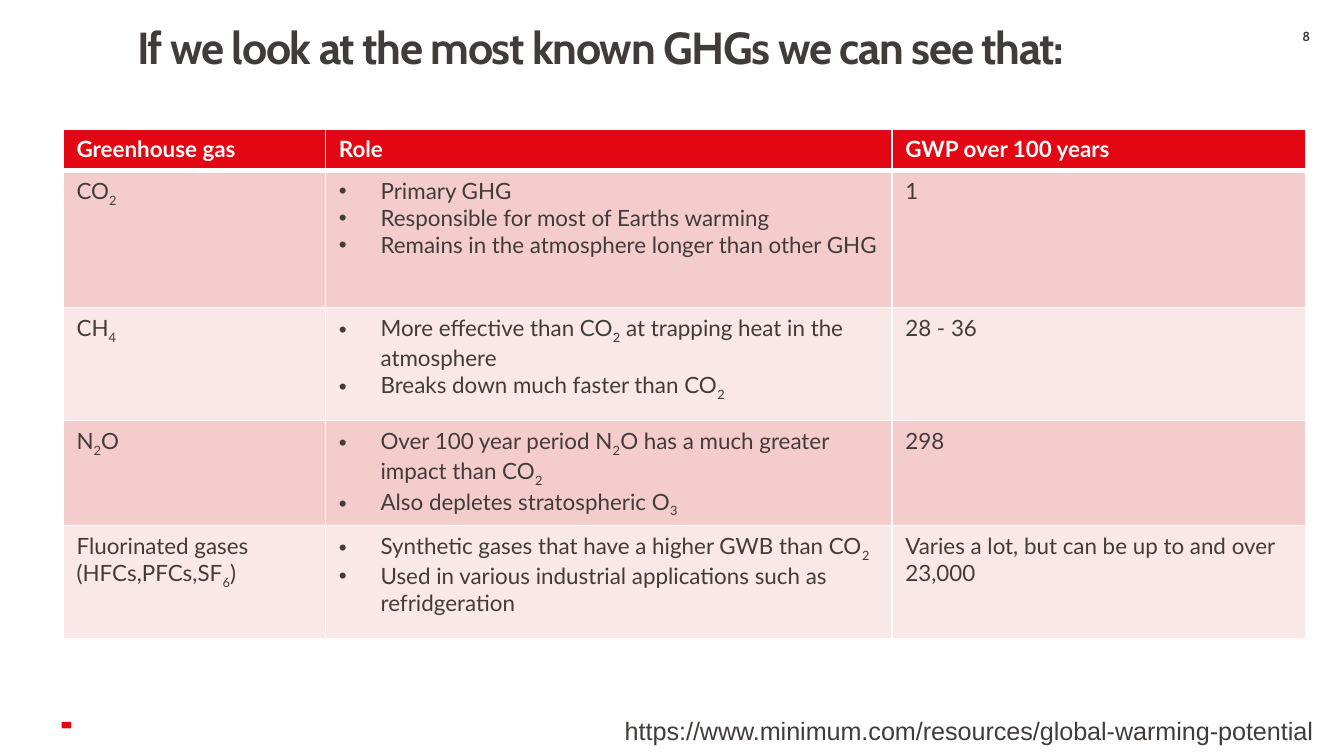
from lxml.etree import SubElement
from pptx import Presentation
from pptx.dml.color import RGBColor
from pptx.enum.shapes import MSO_SHAPE
from pptx.enum.text import MSO_ANCHOR, MSO_AUTO_SIZE, PP_ALIGN
from pptx.oxml.ns import qn
from pptx.util import Inches, Pt

RED = RGBColor(0xE3, 0x06, 0x13)
DARK = RGBColor(0x41, 0x3C, 0x3A)
WHITE = RGBColor(0xFF, 0xFF, 0xFF)
BANDS = [RGBColor(0xF4, 0xCC, 0xCC), RGBColor(0xFA, 0xE7, 0xE7)]

TITLE_FONT = {"name": "Cabin", "size": Pt(24), "bold": True}
NUMBER_FONT = {"name": "Cabin", "size": Pt(7), "bold": True}
LINK_FONT = {"name": "Arial", "size": Pt(13.5)}
HEADER_FONT = {"name": "Lato", "size": Pt(12), "bold": True}
BODY_FONT = {"name": "Lato", "size": Pt(12), "bold": False}

COLUMN_WIDTHS = [1.95, 4.21, 3.08]
ROW_HEIGHTS = [0.31, 1.02, 0.84, 0.65, 0.84]
HEADERS = ["Greenhouse gas", "Role", "GWP over 100 years"]
# Gas lines, role bullets, warming potential; "_" lowers the next character
GASES = [
    (["CO_2"],
     ["Primary GHG", "Responsible for most of Earths warming",
      "Remains in the atmosphere longer than other GHG"],
     ["1"]),
    (["CH_4"],
     ["More effective than CO_2 at trapping heat in the atmosphere",
      "Breaks down much faster than CO_2"],
     ["28 - 36"]),
    (["N_2O"],
     ["Over 100 year period N_2O has a much greater impact than CO_2",
      "Also depletes stratospheric O_3"],
     ["298"]),
    (["Fluorinated gases", "(HFCs,PFCs,SF_6)"],
     ["Synthetic gases that have a higher GWB than CO_2",
      "Used in various industrial applications such as refridgeration"],
     ["Varies a lot, but can be up to and over 23,000"]),
]


def set_all(target, values):
    for name, value in values.items():
        setattr(target, name, value)


def place(shape, box):
    names = ("left", "top", "width", "height")
    set_all(shape, dict(zip(names, map(Inches, box))))


def add_run(paragraph, text, font, color, subscript=False):
    run = paragraph.add_run()
    run.text = text
    set_all(run.font, font)
    run.font.color.rgb = color
    if subscript:
        run.font._element.set("baseline", "-25000")
    return run


def add_formula_text(paragraph, text, font, color):
    first, *rest = text.split("_")
    add_run(paragraph, first, font, color)
    for part in rest:
        add_run(paragraph, part[0], font, color, subscript=True)
        if part[1:]:
            add_run(paragraph, part[1:], font, color)


def add_bullet(paragraph):
    properties = paragraph._p.get_or_add_pPr()
    properties.set("marL", str(Inches(0.31)))
    properties.set("indent", str(Inches(-0.31)))
    SubElement(properties, qn("a:buFont"), typeface="Arial")
    SubElement(properties, qn("a:buChar"), char="•")


def add_borders(cell, top, bottom):
    properties = cell._tc.get_or_add_tcPr()
    for side, width in (("L", 1), ("R", 1), ("T", top), ("B", bottom)):
        line = SubElement(properties, qn(f"a:ln{side}"), w=str(Pt(width)))
        fill = SubElement(line, qn("a:solidFill"))
        SubElement(fill, qn("a:srgbClr"), val=str(WHITE))


def fill_cell(cell, lines, font, color, fill, bulleted=False):
    cell.fill.solid()
    cell.fill.fore_color.rgb = fill
    frame = cell.text_frame
    for index, line in enumerate(lines):
        paragraph = frame.add_paragraph() if index else frame.paragraphs[0]
        if bulleted:
            add_bullet(paragraph)
        add_formula_text(paragraph, line, font, color)


def add_title(slide, box):
    title = slide.shapes.title
    place(title, box)
    frame = title.text_frame
    set_all(frame, {
        "margin_left": Inches(0.2), "margin_top": 0,
        "margin_right": Inches(0.08), "margin_bottom": Inches(0.05),
        "vertical_anchor": MSO_ANCHOR.TOP, "word_wrap": True,
        "auto_size": MSO_AUTO_SIZE.NONE})
    paragraph = frame.paragraphs[0]
    set_all(paragraph, {"alignment": PP_ALIGN.LEFT, "line_spacing": 0.9})
    run = add_run(paragraph, "If we look at the most known GHGs we can see that:",
                  TITLE_FONT, DARK)
    run.font._element.set("spc", "-70")


def add_label(slide, box, text, font, alignment, margin):
    label = slide.shapes.add_textbox(*map(Inches, box))
    frame = label.text_frame
    set_all(frame, {"word_wrap": True, "margin_top": Inches(margin),
                    "margin_bottom": Inches(margin)})
    frame.paragraphs[0].alignment = alignment
    add_run(frame.paragraphs[0], text, font, DARK)


def add_marker(slide, box):
    marker = slide.shapes.add_shape(MSO_SHAPE.RECTANGLE, *map(Inches, box))
    marker.rotation = 270
    marker.shadow.inherit = False
    marker.fill.solid()
    marker.fill.fore_color.rgb = RED
    marker.line.fill.background()


def add_gas_table(slide, box):
    table = slide.shapes.add_table(
        len(ROW_HEIGHTS), len(COLUMN_WIDTHS), *map(Inches, box)).table
    # Columns share the full width in proportion
    for column, width in zip(table.columns, COLUMN_WIDTHS):
        column.width = Inches(box[2] * width / sum(COLUMN_WIDTHS))
    for row, height in zip(table.rows, ROW_HEIGHTS):
        row.height = Inches(height)

    # Header row, set off by a thick white rule
    for cell, header in zip(table.rows[0].cells, HEADERS):
        add_borders(cell, top=1, bottom=3)
        fill_cell(cell, [header], HEADER_FONT, WHITE, RED)

    # One banded row for each gas
    for index, gas in enumerate(GASES):
        for column, lines in enumerate(gas):
            cell = table.cell(index + 1, column)
            add_borders(cell, top=1 if index else 3, bottom=1)
            fill_cell(cell, lines, BODY_FONT, DARK, BANDS[index % 2],
                      bulleted=column == 1)


def main():
    presentation = Presentation()
    presentation.slide_width = Inches(10)
    presentation.slide_height = Inches(10) * 9 // 16
    slide = presentation.slides.add_slide(presentation.slide_layouts[5])

    add_marker(slide, (0.47, 5.36, 0.05, 0.07))
    add_title(slide, (0.82, 0.19, 8.08, 0.63))
    add_label(slide, (9.44, 0.21, 0.56, 0.18), "8", NUMBER_FONT,
              PP_ALIGN.CENTER, 0)
    add_label(slide, (4.55, 5.27, 8.02, 0.33),
              "https://www.minimum.com/resources/global-warming-potential",
              LINK_FONT, PP_ALIGN.LEFT, 0.05)
    add_gas_table(slide, (0.47, 0.96, 9.25, 3.71))
    presentation.save("out.pptx")


if __name__ == "__main__":
    main()
